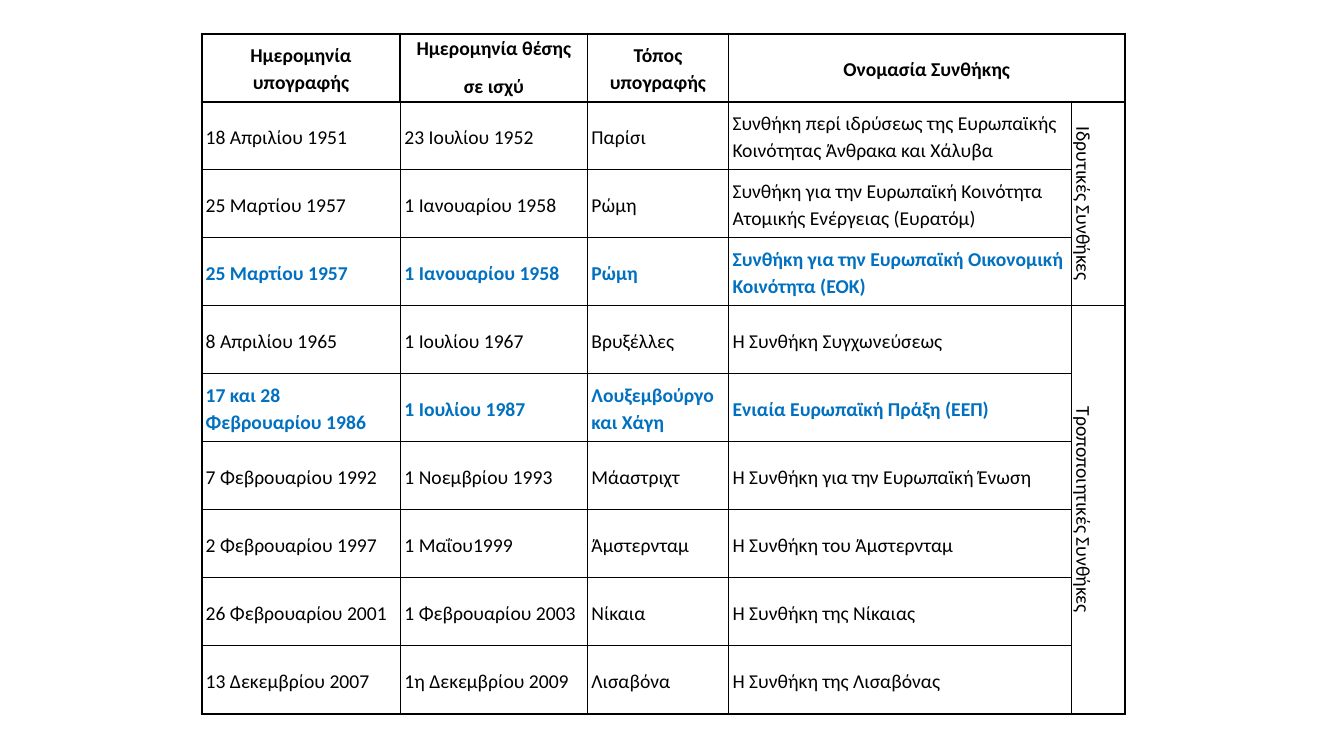
from lxml import etree
from pptx import Presentation, util as u
from pptx.dml.color import RGBColor
from pptx.enum import text
from pptx.oxml.ns import qn

BLACK, BLUE = "000000", "0070C0"
THIN, THICK = 1, 1.5
COL_WIDTHS = [142, 133.6, 100.8, 244.8, 38.4]
ROW_HEIGHT = 48.6

HEADERS = ["Ημερομηνία υπογραφής", "Ημερομηνία θέσης\nσε ισχύ", "Τόπος υπογραφής", "Ονομασία Συνθήκης"]
TREATIES = [
    ("18 Απριλίου 1951", "23 Ιουλίου 1952", "Παρίσι",
     "Συνθήκη περί ιδρύσεως της Ευρωπαϊκής Κοινότητας Άνθρακα και Χάλυβα"),
    ("25 Μαρτίου 1957", "1 Ιανουαρίου 1958", "Ρώμη",
     "Συνθήκη για την Ευρωπαϊκή Κοινότητα Ατομικής Ενέργειας (Ευρατόμ)"),
    ("25 Μαρτίου 1957", "1 Ιανουαρίου 1958", "Ρώμη",
     "Συνθήκη για την Ευρωπαϊκή Οικονομική Κοινότητα (ΕΟΚ)"),
    ("8 Απριλίου 1965", "1 Ιουλίου 1967", "Βρυξέλλες", "Η Συνθήκη Συγχωνεύσεως"),
    ("17 και 28 Φεβρουαρίου 1986", "1 Ιουλίου 1987", "Λουξεμβούργο και Χάγη",
     "Ενιαία Ευρωπαϊκή Πράξη (ΕΕΠ)"),
    ("7 Φεβρουαρίου 1992", "1 Νοεμβρίου 1993", "Μάαστριχτ", "Η Συνθήκη για την Ευρωπαϊκή Ένωση"),
    ("2 Φεβρουαρίου 1997", "1 Μαΐου1999", "Άμστερνταμ", "Η Συνθήκη του Άμστερνταμ"),
    ("26 Φεβρουαρίου 2001", "1 Φεβρουαρίου 2003", "Νίκαια", "Η Συνθήκη της Νίκαιας"),
    ("13 Δεκεμβρίου 2007", "1η Δεκεμβρίου 2009", "Λισαβόνα", "Η Συνθήκη της Λισαβόνας"),
]
HIGHLIGHTED_ROWS = {3, 5}
GROUPS = [(1, 3, "Ιδρυτικές Συνθήκες"), (4, 9, "Τροποποιητικές Συνθήκες")]


def rgb(value):
    return RGBColor.from_string(value)


def write(tf, content, font="Calibri", size=14, color=BLACK, bold=False, center=False, spacing=1.15):
    for i, line in enumerate(content.split("\n")):
        p = tf.paragraphs[0] if i == 0 else tf.add_paragraph()
        p.alignment = text.PP_ALIGN.CENTER if center else text.PP_ALIGN.LEFT
        p.line_spacing = spacing
        p.space_after = u.Pt(10)
        r = p.add_run()
        r.text = line
        r.font.name, r.font.size, r.font.bold = font, u.Pt(size), bold
        r.font.color.rgb = rgb(color)


class TreatySlide:
    """Holds the table style and the current slide."""

    def __init__(self, prs):
        self.slide = prs.slides.add_slide(prs.slide_layouts[6])
        self.border_color = BLACK

    def table(self, left, top, widths, rows, row_height):
        frame = self.slide.shapes.add_table(rows, len(widths), u.Pt(left), u.Pt(top),
                                            u.Pt(sum(widths)), u.Pt(rows * row_height))
        table = frame.table
        table.first_row = table.horz_banding = False
        for col, width in zip(table.columns, widths):
            col.width = u.Pt(width)
        for row in table.rows:
            row.height = u.Pt(row_height)
        return table

    def borders(self, cell, **widths):
        tcPr = cell._tc.get_or_add_tcPr()
        for side, width in widths.items():
            ln = etree.SubElement(tcPr, qn(f"a:ln{side}"), w=str(u.Pt(width)))
            fill = etree.SubElement(ln, qn("a:solidFill"))
            etree.SubElement(fill, qn("a:srgbClr"), val=self.border_color)

    def cell(self, table, row, col, content, last_row=None, last_col=None, vertical=False, **style):
        last_row, last_col = last_row or row, last_col or col
        cell = table.cell(row, col)
        if (last_row, last_col) != (row, col):
            cell.merge(table.cell(last_row, last_col))
        for i in range(row, last_row + 1):
            for j in range(col, last_col + 1):
                header = row == 0
                self.borders(table.cell(i, j),
                             L=THICK if header or col == 0 else THIN,
                             R=THICK if header else THIN,
                             T=THICK if row <= 1 else THIN,
                             B=THICK if header or last_row == len(table.rows) - 1 else THIN)
                table.cell(i, j).fill.background()
        cell.margin_left = cell.margin_right = u.Pt(2.9)
        cell.margin_top = cell.margin_bottom = 0
        cell.vertical_anchor = text.MSO_ANCHOR.MIDDLE
        if vertical:
            cell._tc.get_or_add_tcPr().set("vert", "vert")
        write(cell.text_frame, content, **style)


def main():
    prs = Presentation()
    prs.slide_width, prs.slide_height = u.Pt(960), u.Pt(540)
    s = TreatySlide(prs)
    table = s.table(144, 24, COL_WIDTHS, len(TREATIES) + 1, ROW_HEIGHT)
    for col, header in enumerate(HEADERS):
        s.cell(table, 0, col, header, last_col=4 if col == 3 else col, bold=True, center=True,
               spacing=1.0 if "\n" in header else 1.15)
    for row, treaty in enumerate(TREATIES, 1):
        key = row in HIGHLIGHTED_ROWS
        for col, content in enumerate(treaty):
            s.cell(table, row, col, content, color=BLUE if key else BLACK, bold=key)
    for first, last, label in GROUPS:
        s.cell(table, first, 4, label, last_row=last, vertical=True, center=True)
    prs.save("out.pptx")


if __name__ == "__main__":
    main()
